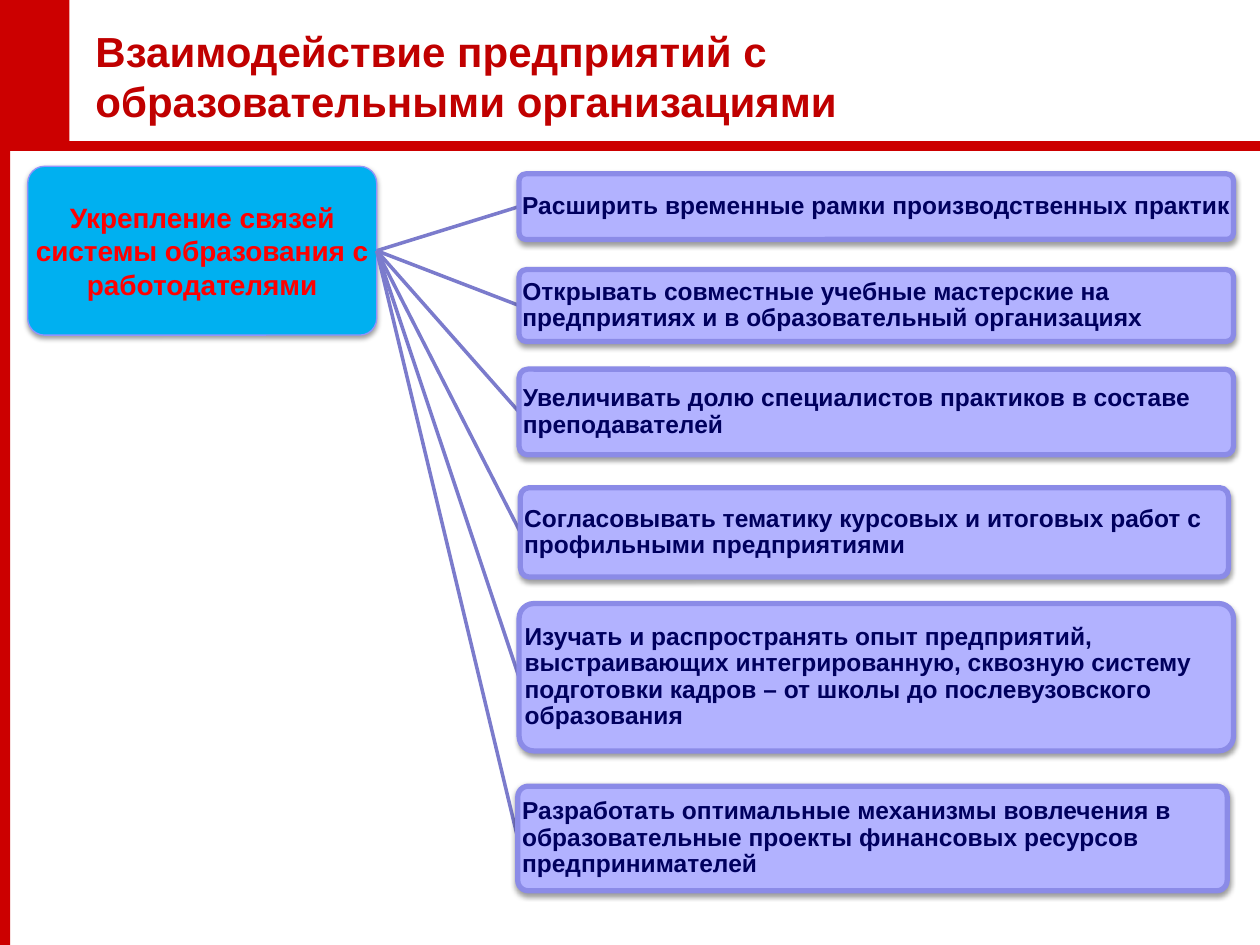
from typing import NamedTuple

from lxml import etree
from pptx import Presentation
from pptx.dml.color import RGBColor
from pptx.enum.shapes import MSO_CONNECTOR, MSO_SHAPE
from pptx.enum.text import MSO_ANCHOR, PP_ALIGN
from pptx.oxml import parse_xml
from pptx.oxml.ns import nsdecls, qn
from pptx.util import Inches, Pt

RED = "CC0000"
RIGHT_SIDE, LEFT_SIDE = 3, 1


class Box(NamedTuple):
    left: float
    top: float
    width: float
    height: float
    text: str


GOAL = Box(0.22, 1.32, 2.77, 1.34, "Укрепление связей системы образования с работодателями")
MEASURES = [
    Box(4.12, 1.38, 5.67, 0.52, "Расширить временные рамки производственных практик"),
    Box(4.12, 2.14, 5.67, 0.57,
        "Открывать совместные учебные мастерские на предприятиях и в образовательный организациях"),
    Box(4.12, 2.93, 5.67, 0.68,
        "Увеличивать долю специалистов практиков в составе преподавателей"),
    Box(4.13, 3.87, 5.62, 0.71,
        "Согласовывать тематику курсовых и итоговых работ с профильными предприятиями"),
    Box(4.12, 4.79, 5.67, 1.17,
        "Изучать и распространять опыт предприятий, выстраивающих интегрированную, "
        "сквозную систему подготовки кадров – от школы до послевузовского образования"),
    Box(4.11, 6.24, 5.63, 0.83,
        "Разработать оптимальные механизмы вовлечения в образовательные проекты "
        "финансовых ресурсов предпринимателей"),
]


def color(value: str) -> RGBColor:
    return RGBColor.from_string(value)


def write_text(shape, text: str, *, size: float, font_color: str, inset: float,
               align=PP_ALIGN.LEFT, line_spacing: float = 1.0) -> None:
    frame = shape.text_frame
    frame.word_wrap = True
    frame.vertical_anchor = MSO_ANCHOR.MIDDLE
    frame.margin_left = frame.margin_right = Inches(inset)
    frame.margin_top = frame.margin_bottom = Inches(min(inset, 0.05))
    paragraph = frame.paragraphs[0]
    paragraph.text = text
    paragraph.alignment = align
    paragraph.line_spacing = line_spacing
    font = paragraph.runs[0].font
    font.name = "Arial"
    font.size = Pt(size)
    font.bold = True
    font.color.rgb = color(font_color)


def add_red_block(slide, width: float, height: float) -> None:
    """Draw a plain red rectangle from the top left corner of the slide."""
    block = slide.shapes.add_shape(MSO_SHAPE.RECTANGLE, 0, 0, Inches(width), Inches(height))
    block.shadow.inherit = False
    block.fill.solid()
    block.fill.fore_color.rgb = color(RED)
    block.line.fill.background()


def add_line(slide, start: tuple[float, float], end: tuple[float, float],
             line_color: str, width: float):
    line = slide.shapes.add_connector(
        MSO_CONNECTOR.STRAIGHT, *(Inches(value) for value in (*start, *end)))
    line.line.color.rgb = color(line_color)
    line.line.width = Pt(width)
    etree.SubElement(line._element.spPr, qn("a:effectLst"))
    return line


def add_soft_shadow(shape) -> None:
    shape.shadow.inherit = False
    effects = shape._element.spPr.find(qn("a:effectLst"))
    effects.append(parse_xml(
        f'<a:outerShdw {nsdecls("a")} blurRad="{Pt(3.1)}" dist="{Pt(1.6)}" '
        'dir="5400000" rotWithShape="0"><a:srgbClr val="000000">'
        '<a:alpha val="38000"/></a:srgbClr></a:outerShdw>'))


def add_box(slide, box: Box, *, fill: str, line_color: str, line_width: float, **text_format):
    shape = slide.shapes.add_shape(
        MSO_SHAPE.ROUNDED_RECTANGLE, Inches(box.left), Inches(box.top),
        Inches(box.width), Inches(box.height))
    shape.adjustments[0] = 0.1
    shape.fill.solid()
    shape.fill.fore_color.rgb = color(fill)
    shape.line.color.rgb = color(line_color)
    shape.line.width = Pt(line_width)
    add_soft_shadow(shape)
    write_text(shape, box.text, inset=0.01, **text_format)
    return shape


def add_measure(slide, goal, box: Box) -> None:
    """Draw a measure in front of the line that ties it to the goal."""
    start = (GOAL.left + GOAL.width, GOAL.top + GOAL.height / 2)
    end = (box.left, box.top + box.height / 2)
    connector = add_line(slide, start, end, "7B7BCC", 2)
    measure = add_box(slide, box, fill="B2B2FF", line_color="8B8BE7", line_width=3,
                      size=14, font_color="00005E", line_spacing=0.9)
    connector.begin_connect(goal, RIGHT_SIDE)
    connector.end_connect(measure, LEFT_SIDE)


def main() -> None:
    presentation = Presentation()
    presentation.slide_width = Inches(10)
    presentation.slide_height = Inches(7.5)
    slide = presentation.slides.add_slide(presentation.slide_layouts[6])

    add_red_block(slide, 0.08, 7.5)
    add_line(slide, (0, 1.16), (10, 1.16), RED, 6)
    add_red_block(slide, 0.55, 1.14)

    title = slide.shapes.add_textbox(Inches(0.66), Inches(0.13), Inches(8.13), Inches(0.94))
    write_text(title, "Взаимодействие предприятий с образовательными организациями",
               size=24, font_color="C00000", inset=0.1)

    goal = add_box(slide, GOAL, fill="00B0F0", line_color="9393FC", line_width=0.75,
                   size=16, font_color="FF0000", align=PP_ALIGN.CENTER)
    for box in MEASURES:
        add_measure(slide, goal, box)

    presentation.save("out.pptx")


if __name__ == "__main__":
    main()
